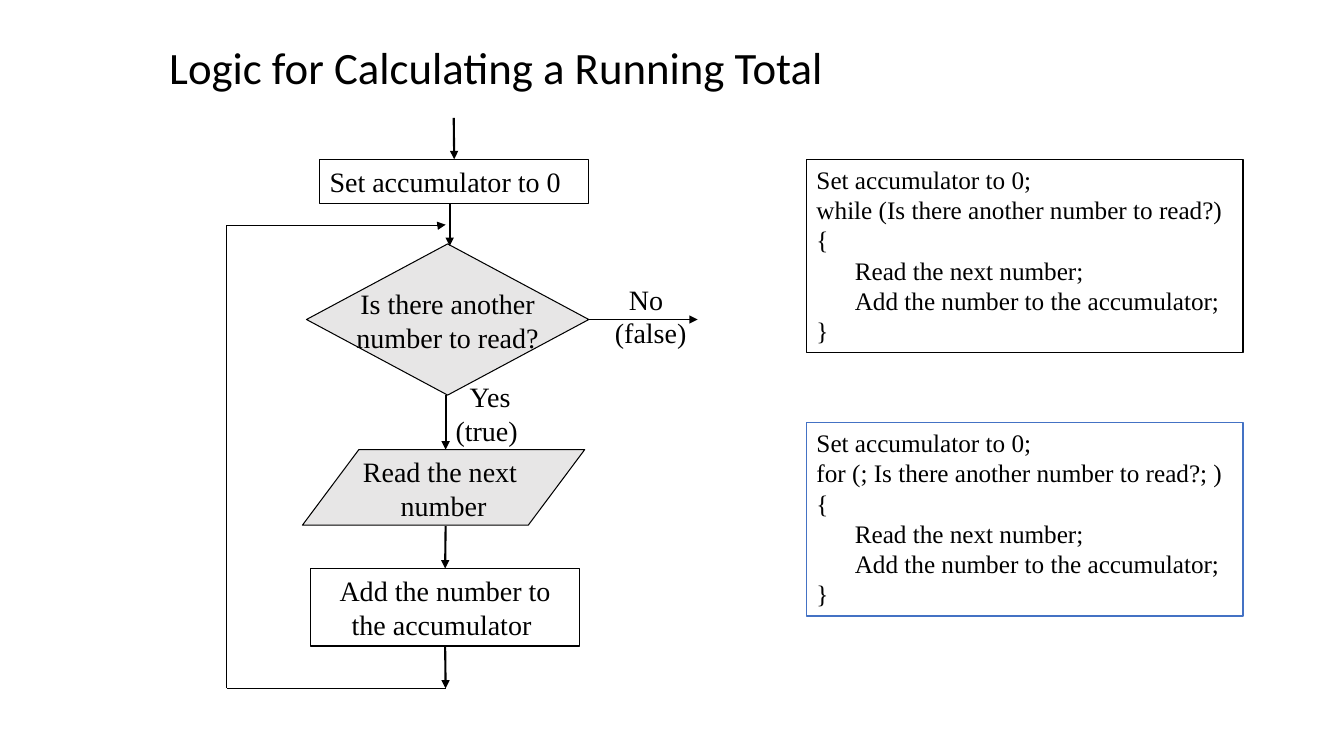
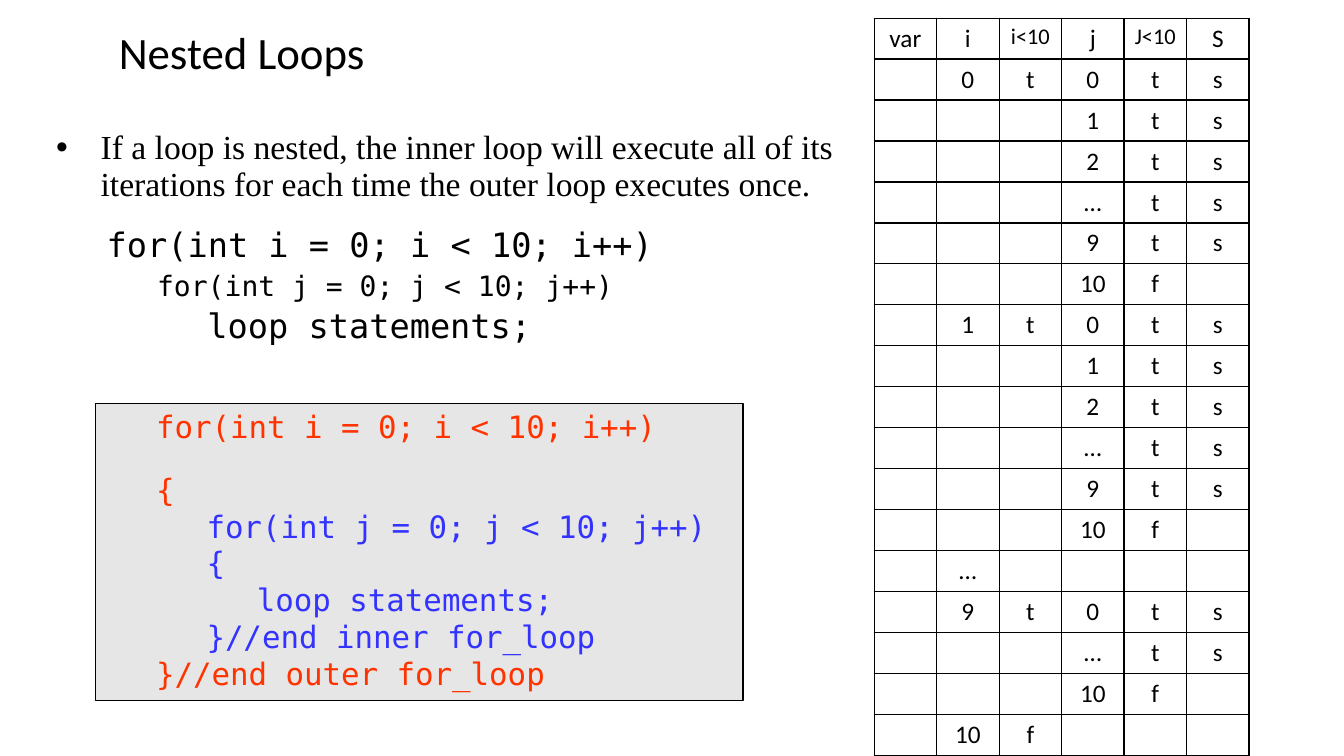
from dataclasses import dataclass

from lxml.etree import SubElement
from pptx import Presentation
from pptx.dml.color import RGBColor
from pptx.enum.shapes import MSO_CONNECTOR, MSO_SHAPE
from pptx.enum.text import MSO_ANCHOR, PP_ALIGN
from pptx.oxml.ns import qn
from pptx.util import Inches, Pt


@dataclass(frozen=True)
class Theme:
    black: str = "000000"
    white: str = "FFFFFF"
    gray: str = "E7E6E6"
    blue: str = "4472C4"
    outer: str = "FF3300"
    inner: str = "3333FF"
    heading_font: str = "Calibri"
    body_font: str = "Times New Roman"
    code_font: str = "DejaVu Sans Mono"
    title_size: int = 32
    body_size: int = 24
    code_size: int = 22
    flow_size: int = 20
    table_size: int = 18
    condition_size: int = 16
    tight: float = 0.9
    thin: float = 0.75
    medium: float = 1
    thick: float = 1.5


THEME = Theme()


@dataclass
class Line:
    text: str
    size: int = THEME.flow_size
    font: str = THEME.body_font
    color: str = THEME.black
    left: float = 0
    indent: float = 0
    before: int = 0
    spacing: float = 1
    align: PP_ALIGN = PP_ALIGN.LEFT
    bullet: str = ""


def rgb(color):
    return RGBColor.from_string(color)


def write_paragraph(paragraph, line):
    paragraph.text = line.text
    paragraph.alignment = line.align
    paragraph.line_spacing = line.spacing
    paragraph.space_before = Pt(line.before)
    properties = paragraph._p.get_or_add_pPr()
    properties.set("marL", str(Inches(line.left)))
    properties.set("indent", str(Inches(line.indent)))
    if line.bullet:
        SubElement(properties, qn("a:buFont")).set("typeface", "Arial")
        SubElement(properties, qn("a:buChar")).set("char", line.bullet)
    for run in paragraph.runs:
        run.font.size = Pt(line.size)
        run.font.name = line.font
        run.font.color.rgb = rgb(line.color)


def write_lines(text_frame, lines, anchor=MSO_ANCHOR.TOP, wrap=True):
    text_frame.word_wrap = wrap
    text_frame.vertical_anchor = anchor
    for index, line in enumerate(lines):
        paragraph = text_frame.add_paragraph() if index else text_frame.paragraphs[0]
        write_paragraph(paragraph, line)


def add_text(slide, box, lines, anchor=MSO_ANCHOR.TOP):
    shape = slide.shapes.add_textbox(*map(Inches, box))
    write_lines(shape.text_frame, lines, anchor)


def add_title(slide, box, text):
    line = Line(text, THEME.title_size, THEME.heading_font, spacing=THEME.tight)
    add_text(slide, box, [line], MSO_ANCHOR.MIDDLE)


def add_box(slide, box, lines, kind=MSO_SHAPE.RECTANGLE, fill=THEME.white,
            border=THEME.black, width=THEME.medium, wrap=True):
    shape = slide.shapes.add_shape(kind, *map(Inches, box))
    shape.shadow.inherit = False
    shape.fill.solid()
    shape.fill.fore_color.rgb = rgb(fill)
    shape.line.color.rgb = rgb(border)
    shape.line.width = Pt(width)
    write_lines(shape.text_frame, lines, wrap=wrap)
    return shape


def add_line(slide, start, end, width=THEME.thick, arrow=True,
             kind=MSO_CONNECTOR.STRAIGHT):
    connector = slide.shapes.add_connector(kind, *map(Inches, (*start, *end)))
    connector.line.color.rgb = rgb(THEME.black)
    connector.line.width = Pt(width)
    if arrow:
        SubElement(connector.line._get_or_add_ln(), qn("a:tailEnd")).set("type", "triangle")
    SubElement(connector._element.spPr, qn("a:effectLst"))
    return connector


def add_return_path(slide, left, right, top, bottom):
    center_x, center_y = (left + right) / 2, (top + bottom) / 2
    half_width, half_height = (bottom - top) / 2, (right - left) / 2
    connector = add_line(slide, (center_x + half_width, center_y + half_height),
                         (center_x - half_width, center_y - half_height),
                         THEME.thin, kind=MSO_CONNECTOR.ELBOW)
    properties = connector._element.spPr
    properties.find(qn("a:xfrm")).set("rot", str(90 * 60000))
    geometry = properties.find(qn("a:prstGeom"))
    adjustments = geometry.find(qn("a:avLst"))
    if adjustments is None:
        adjustments = SubElement(geometry, qn("a:avLst"))
    guide = SubElement(adjustments, qn("a:gd"))
    guide.set("name", "adj1")
    guide.set("fmla", "val 99800")


def add_pseudocode(slide, top, loop, border):
    steps = [("Set accumulator to 0;", 0), (loop, 0), ("{", 0),
             ("Read the next number;", 0.38),
             ("Add the number to the accumulator;", 0.38), ("}", 0)]
    lines = [Line(text, THEME.table_size, left=left) for text, left in steps]
    add_box(slide, (8, top, 4.33, 1.92), lines, border=border)


def style_cell(cell, text, size):
    properties = cell._tc.get_or_add_tcPr()
    for side in ("lnL", "lnR", "lnT", "lnB"):
        border = SubElement(properties, qn(f"a:{side}"))
        border.set("w", str(Pt(THEME.medium)))
        fill = SubElement(border, qn("a:solidFill"))
        SubElement(fill, qn("a:srgbClr")).set("val", THEME.black)
    cell.fill.solid()
    cell.fill.fore_color.rgb = rgb(THEME.white)
    line = Line(text, size, THEME.heading_font, align=PP_ALIGN.CENTER)
    write_paragraph(cell.text_frame.paragraphs[0], line)


def add_trace_table(slide, box, rows):
    frame = slide.shapes.add_table(len(rows), len(rows[0]), *map(Inches, box))
    table = frame.table
    table.first_row = False
    table.horz_banding = False
    for row_index, row in enumerate(rows):
        for column_index, text in enumerate(row):
            size = THEME.condition_size if "<" in text else THEME.table_size
            style_cell(table.cell(row_index, column_index), text, size)


def trace_pass(outer, inner_values):
    rows = []
    for index, inner in enumerate(inner_values):
        start = ("", "") if index else (outer, "t")
        result = ("f", "") if inner == "10" else ("t", "s")
        rows.append(("", *start, inner, *result))
    return rows


def build_running_total(slide):
    center = PP_ALIGN.CENTER
    add_title(slide, (1.58, 0.15, 7.83, 1.09), "Logic for Calculating a Running Total")
    start = add_box(slide, (3.17, 1.58, 2.67, 0.44), [Line("Set accumulator to 0")])
    decision = add_box(
        slide, (3.04, 2.42, 2.8, 1.5),
        [Line("Is there another", align=center), Line("number to read?", align=center)],
        MSO_SHAPE.FLOWCHART_DECISION, THEME.gray, width=THEME.thin, wrap=False)
    addition = add_box(slide, (3.08, 5.64, 2.67, 0.77),
                       [Line("Add the number to the accumulator ", align=center)])
    add_box(slide, (3, 4.46, 2.8, 0.75),
            [Line("Read the next ", align=center), Line("number", align=center)],
            MSO_SHAPE.FLOWCHART_DATA, THEME.gray, width=THEME.thin, wrap=False)

    add_line(slide, (4.5, 1.17), (4.5, 1.58)).end_connect(start, 0)
    add_line(slide, (4.46, 2.02), (4.46, 2.44))
    add_line(slide, (4.42, 3.92), (4.42, 4.46))
    add_line(slide, (4.42, 5.22), (4.42, 5.64)).end_connect(addition, 0)
    add_line(slide, (4.42, 6.42), (4.42, 6.83)).begin_connect(addition, 2)
    add_line(slide, (5.83, 3.17), (6.92, 3.17), THEME.thin).begin_connect(decision, 3)
    add_line(slide, (4.42, 6.83), (2.25, 6.83), THEME.thin, arrow=False)
    add_return_path(slide, 2.25, 4.42, 2.23, 6.83)

    for left, top, text in ((6, 2.75, "No (false)"), (4.42, 3.72, "Yes (true)")):
        add_text(slide, (left, top, 1.17, 0.77), [Line(text, indent=0.14)])
    add_pseudocode(slide, 1.58, "while (Is there another number to read?)", THEME.black)
    add_pseudocode(slide, 4.19, "for (; Is there another number to read?; )", THEME.blue)


def build_nested_loops(slide):
    outer_loop, inner_loop = "for(int i = 0; i < 10; i++)", "for(int j = 0; j < 10; j++)"
    body = "loop statements;"
    explanation = Line(
        "If a loop is nested, the inner loop will execute all of its iterations "
        "for each time the outer loop executes once.",
        THEME.body_size, left=0.44, indent=-0.44, before=18,
        spacing=THEME.tight, bullet="•")
    short_form = [(outer_loop, THEME.body_size, 0.75, 18),
                  (inner_loop, THEME.flow_size, 1.25, 5),
                  (body, THEME.body_size, 1.75, 5)]
    add_text(slide, (0.46, 1.25, 8.04, 5), [explanation] + [
        Line(text, size, THEME.code_font, left=left, indent=-0.25,
             before=before, spacing=THEME.tight)
        for text, size, left, before in short_form])

    block_form = [(outer_loop, THEME.outer, 0.5, 18), ("{", THEME.outer, 0.5, 18),
                  (inner_loop, THEME.inner, 1, 0), ("{", THEME.inner, 1, 0),
                  (body, THEME.inner, 1.5, 0),
                  ("}//end inner for_loop", THEME.inner, 1, 0),
                  ("}//end outer for_loop", THEME.outer, 0.5, 0)]
    add_box(slide, (0.95, 4, 6.42, 2.95), [
        Line(text, THEME.code_size, THEME.code_font, color, left, before=before)
        for text, color, left, before in block_form], fill=THEME.gray)

    full_pass = ("0", "1", "2", "…", "9", "10")
    rows = [("var", "i", "i<10", "j", "J<10", "S"),
            *trace_pass("0", full_pass), *trace_pass("1", full_pass),
            ("", "…", "", "", "", ""),
            *trace_pass("9", ("0", "…", "10")),
            ("", "10", "f", "", "", "")]
    add_trace_table(slide, (8.67, 0.18, 3.72, 7.32), rows)
    add_title(slide, (1.08, 0, 3.13, 1.09), "Nested Loops")


def main():
    presentation = Presentation()
    presentation.slide_width = Inches(13.33)
    presentation.slide_height = Inches(7.5)
    for build in (build_running_total, build_nested_loops):
        build(presentation.slides.add_slide(presentation.slide_layouts[6]))
    presentation.save("out.pptx")


if __name__ == "__main__":
    main()
